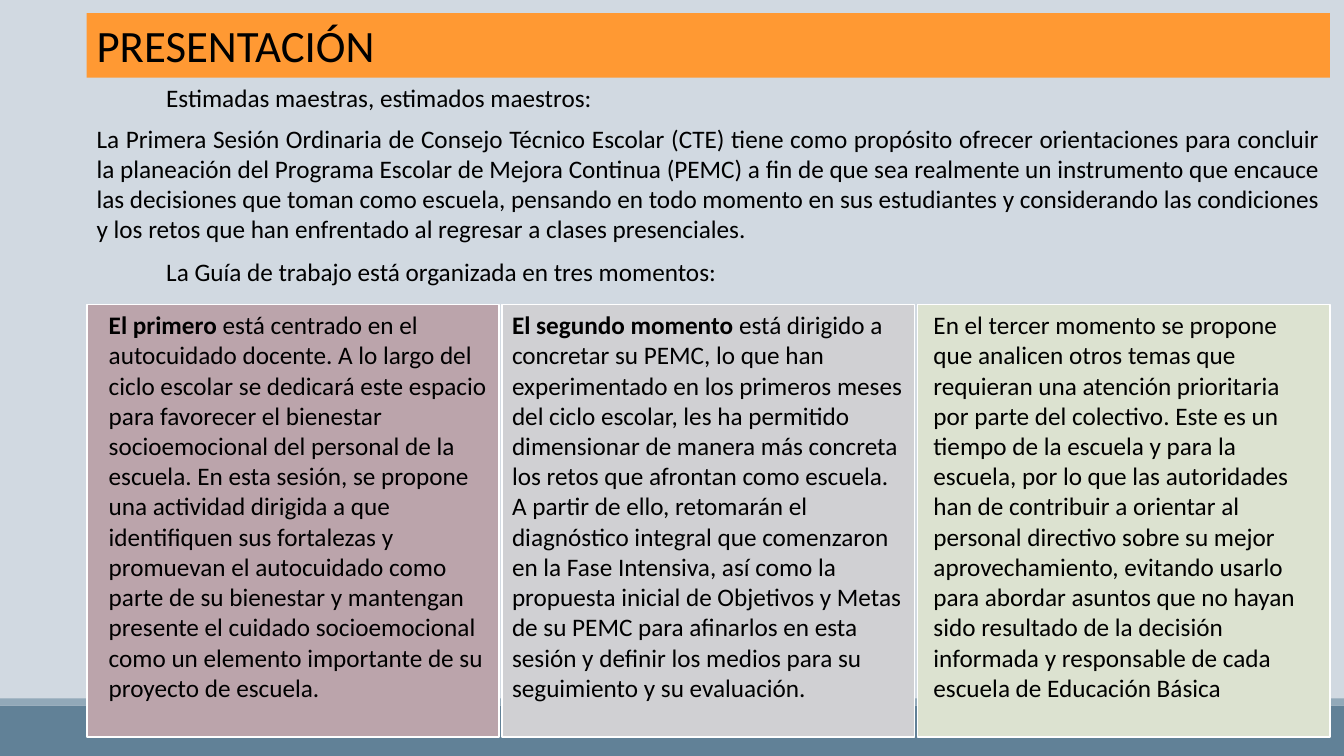
from pptx import Presentation
from pptx.dml.color import RGBColor
from pptx.enum.shapes import MSO_SHAPE
from pptx.enum.text import MSO_ANCHOR, PP_ALIGN
from pptx.util import Inches, Pt

WIDTH, HEIGHT = 13.33, 7.5
COLORS = {
    "background": "D1D9E1", "footer": "618197", "stripe": "92A9B9",
    "title": "FF9933", "text": "000000", "border": "FFFFFF",
}
TITLE = "PRESENTACIÓN"
GREETING = "Estimadas maestras, estimados maestros:"
PURPOSE = (
    "La Primera Sesión Ordinaria de Consejo Técnico Escolar (CTE) tiene como propósito "
    "ofrecer orientaciones para concluir la planeación del Programa Escolar de Mejora "
    "Continua (PEMC) a fin de que sea realmente un instrumento que encauce las decisiones "
    "que toman como escuela, pensando en todo momento en sus estudiantes y considerando "
    "las condiciones y los retos que han enfrentado al regresar a clases presenciales."
)
GUIDE = "La Guía de trabajo está organizada en tres momentos:"
# fill, text inset from the panel's left, text width, text height, bold lead, body
MOMENTS = [
    ("BBA4AB", 0.12, 3.98, 4.34, "El primero ",
     "está centrado en el autocuidado docente. A lo largo del ciclo escolar se dedicará "
     "este espacio para favorecer el bienestar socioemocional del personal de la escuela. "
     "En esta sesión, se propone una actividad dirigida a que identifiquen sus fortalezas "
     "y promuevan el autocuidado como parte de su bienestar y mantengan presente el "
     "cuidado socioemocional como un elemento importante de su proyecto de escuela."),
    ("D0D0D3", 0, 4.09, 4.34, "El segundo momento ",
     "está dirigido a concretar su PEMC, lo que han experimentado en los primeros meses "
     "del ciclo escolar, les ha permitido dimensionar de manera más concreta los retos que "
     "afrontan como escuela. A partir de ello, retomarán el diagnóstico integral que "
     "comenzaron en la Fase Intensiva, así como la propuesta inicial de Objetivos y Metas "
     "de su PEMC para afinarlos en esta sesión y definir los medios para su seguimiento y "
     "su evaluación."),
    ("DCE2D0", 0.06, 3.98, 4.04, "",
     "En el tercer momento se propone que analicen otros temas que requieran una atención "
     "prioritaria por parte del colectivo. Este es un tiempo de la escuela y para la "
     "escuela, por lo que las autoridades han de contribuir a orientar al personal "
     "directivo sobre su mejor aprovechamiento, evitando usarlo para abordar asuntos que "
     "no hayan sido resultado de la decisión informada y responsable de cada escuela de "
     "Educación Básica"),
]

LEFT, CONTENT_WIDTH = 0.86, 12.33
INDENT = 1.55
FOOTER_TOP, STRIPE_HEIGHT = 7, 0.07
PANEL_TOP, PANEL_HEIGHT, GAP = 3.02, 4.29, 0.03
PANEL_WIDTH = (CONTENT_WIDTH - GAP * (len(MOMENTS) - 1)) / len(MOMENTS)


def add_panel(page, box, fill, border=None):
    panel = page.shapes.add_shape(MSO_SHAPE.RECTANGLE, *map(Inches, box))
    panel.shadow.inherit = False
    panel.fill.solid()
    panel.fill.fore_color.rgb = RGBColor.from_string(fill)
    if border:
        panel.line.color.rgb = RGBColor.from_string(border)
        panel.line.width = Pt(1.25)
    else:
        panel.line.fill.background()
    return panel


def write(shape, text, lead="", size=18, align=PP_ALIGN.LEFT, wrap=True):
    """Fill a shape with one paragraph, opened by an optional bold lead."""
    frame = shape.text_frame
    frame.word_wrap = wrap
    frame.vertical_anchor = MSO_ANCHOR.TOP
    para = frame.paragraphs[0]
    para.alignment = align
    for words, bold in ((lead, True), (text, False)):
        if words:
            span = para.add_run()
            span.text = words
            span.font.name = "Calibri"
            span.font.size = Pt(size)
            span.font.bold = bold
            span.font.color.rgb = RGBColor.from_string(COLORS["text"])


def add_text(page, box, text, **style):
    write(page.shapes.add_textbox(*map(Inches, box)), text, **style)


def main():
    deck = Presentation()
    deck.slide_width, deck.slide_height = Inches(WIDTH), Inches(HEIGHT)
    page = deck.slides.add_slide(deck.slide_layouts[6])
    page.background.fill.solid()
    page.background.fill.fore_color.rgb = RGBColor.from_string(COLORS["background"])

    add_panel(page, (0, FOOTER_TOP, WIDTH, HEIGHT - FOOTER_TOP), COLORS["footer"])
    add_panel(page, (0, FOOTER_TOP - STRIPE_HEIGHT, WIDTH, STRIPE_HEIGHT), COLORS["stripe"])

    banner = add_panel(page, (LEFT, 0.13, CONTENT_WIDTH, 0.64), COLORS["title"])
    write(banner, TITLE, size=32)
    add_text(page, (INDENT, 0.77, 4.73, 0.4), GREETING, wrap=False)
    add_text(page, (LEFT, 1.17, CONTENT_WIDTH, 1.31), PURPOSE, align=PP_ALIGN.JUSTIFY)
    add_text(page, (INDENT, 2.49, 5.98, 0.4), GUIDE, wrap=False)

    for column, (fill, inset, width, height, lead, body) in enumerate(MOMENTS):
        left = LEFT + column * (PANEL_WIDTH + GAP)
        add_panel(page, (left, PANEL_TOP, PANEL_WIDTH, PANEL_HEIGHT), fill, COLORS["border"])
        add_text(page, (left + inset, PANEL_TOP, width, height), body, lead=lead)

    deck.save("out.pptx")


if __name__ == "__main__":
    main()
